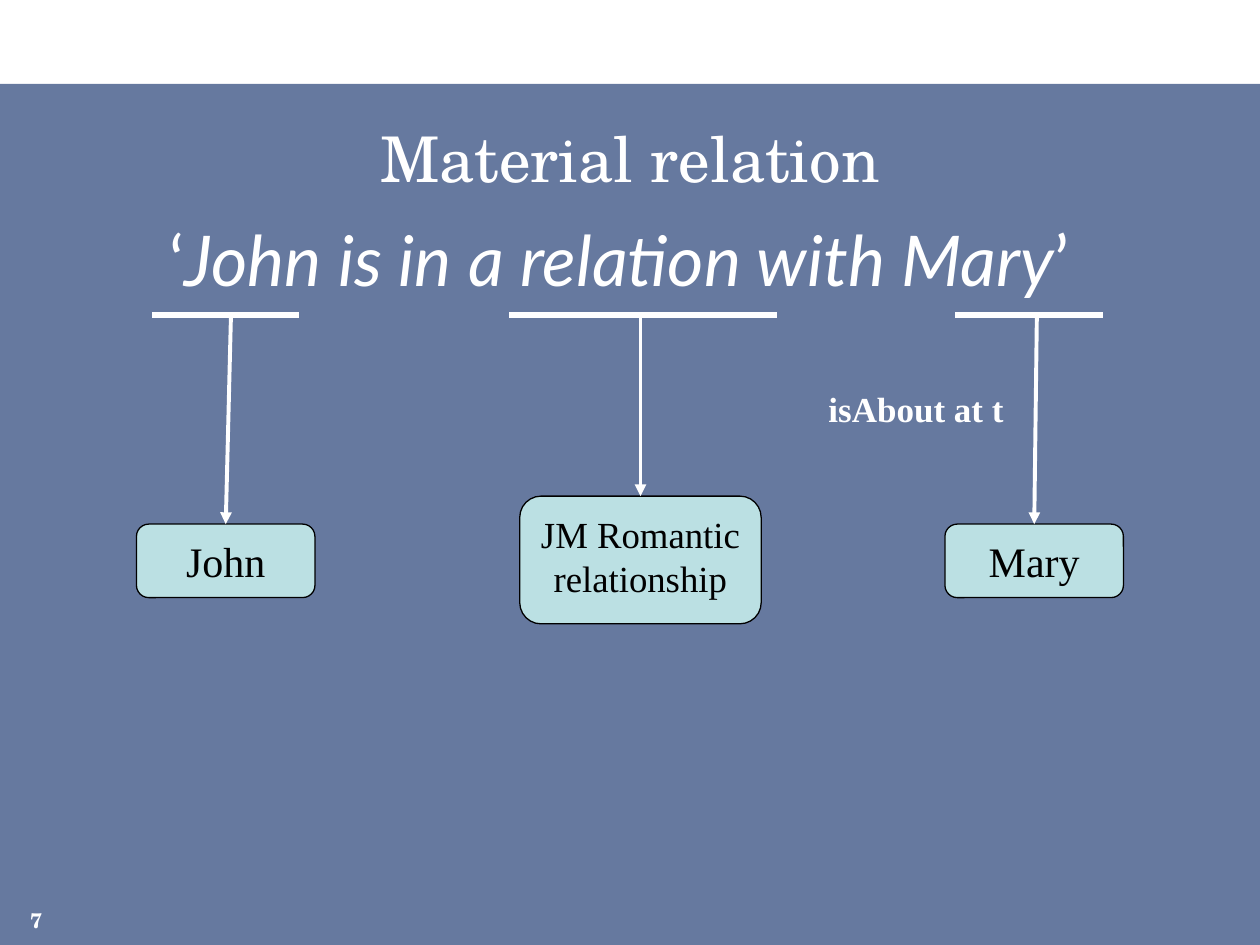
"""Build the slide on material relations."""
from lxml.etree import SubElement
from pptx import Presentation
from pptx.dml.color import RGBColor
from pptx.enum.shapes import MSO_CONNECTOR, MSO_SHAPE
from pptx.enum.text import MSO_ANCHOR, PP_ALIGN
from pptx.oxml.ns import qn
from pptx.util import Pt

WHITE = RGBColor(0xFF, 0xFF, 0xFF)
BLACK = RGBColor(0, 0, 0)
NAVY = RGBColor(0x00, 0x20, 0x60)
AQUA = RGBColor(0xBB, 0xE0, 0xE3)
SERIF, SCHOOL, SANS = "Times New Roman", "TeX Gyre Schola", "Lato"
WORD_Y = 180


def set_font(par, face, size, color=WHITE, bold=False, align=PP_ALIGN.CENTER):
    par.alignment = align
    font = par.font
    font.name, font.size, font.bold = face, Pt(size), bold
    font.color.rgb = color


def add_text(slide, area, text, face, size, anchor=MSO_ANCHOR.MIDDLE,
             wrap=True, **style):
    frame = slide.shapes.add_textbox(*map(Pt, area)).text_frame
    frame.word_wrap = wrap
    frame.vertical_anchor = anchor
    par = frame.paragraphs[0]
    par.text = text
    set_font(par, face, size, **style)
    return frame


def add_panel(slide):
    panel = slide.shapes.add_shape(
        MSO_SHAPE.RECTANGLE, *map(Pt, (0, 48, 720, 492)))
    panel.shadow.inherit = False
    panel.fill.solid()
    panel.fill.fore_color.rgb = NAVY
    panel.line.fill.background()
    color = panel.fill._xPr.find(qn("a:solidFill"))[0]
    SubElement(color, qn("a:alpha"), val="60000")


def add_quote(slide):
    frame = add_text(slide, (12, 120, 684, 96), "", SANS, 40,
                     anchor=MSO_ANCHOR.TOP)
    par = frame.paragraphs[0]
    for text, slant in (("‘", False), ("John is in a relation with Mary", True),
                        ("’", False)):
        run = par.add_run()
        run.text = text
        run.font.italic = slant


def add_box(slide, area, text, size, low):
    box = slide.shapes.add_shape(MSO_SHAPE.ROUNDED_RECTANGLE, *map(Pt, area))
    box.shadow.inherit = False
    box.fill.solid()
    box.fill.fore_color.rgb = AQUA
    box.line.color.rgb = BLACK
    box.line.width = Pt(0.75)
    frame = box.text_frame
    frame.word_wrap = True
    frame.margin_bottom = Pt(low)
    frame.paragraphs[0].text = text
    set_font(frame.paragraphs[0], SERIF, size, BLACK)


def add_line(slide, ends, width, arrow=False):
    line = slide.shapes.add_connector(MSO_CONNECTOR.STRAIGHT, *map(Pt, ends))
    line.line.color.rgb = WHITE
    line.line.width = Pt(width)
    if arrow:
        SubElement(line.line._get_or_add_ln(), qn("a:tailEnd"), type="triangle")
    SubElement(line._element.spPr, qn("a:effectLst"))


def add_term(slide, text, area, bar, stem, size=24, low=3.6):
    left, top, width, _ = area
    add_box(slide, area, text, size, low)
    add_line(slide, (bar[0], WORD_Y, bar[1], WORD_Y), 3)
    add_line(slide, (stem, WORD_Y, left + width / 2, top), 2.25, True)


def main():
    deck = Presentation()
    deck.slide_width, deck.slide_height = Pt(720), Pt(540)
    slide = deck.slides.add_slide(deck.slide_layouts[6])
    add_panel(slide)
    add_text(slide, (18, 60, 684, 60), "Material relation", SCHOOL, 36)
    add_quote(slide)
    add_term(slide, "John", (78, 299.5, 102, 42), (87, 171), 132)
    add_term(slide, "Mary", (540, 299.5, 102, 42), (546, 630), 592.5)
    add_term(slide, "JM Romantic relationship", (297, 283.5, 138, 73),
             (291, 444), 366, size=21, low=8)
    add_text(slide, (466, 217.5, 115, 31.5), "isAbout at t", SERIF, 20,
             wrap=False, bold=True)
    page = add_text(slide, (0, 510, 24, 23), "7", SCHOOL, 12,
                    anchor=MSO_ANCHOR.BOTTOM, bold=True, align=PP_ALIGN.RIGHT)
    page.margin_left = page.margin_right = 0
    page.margin_top = page.margin_bottom = 0
    deck.save("out.pptx")


if __name__ == "__main__":
    main()
